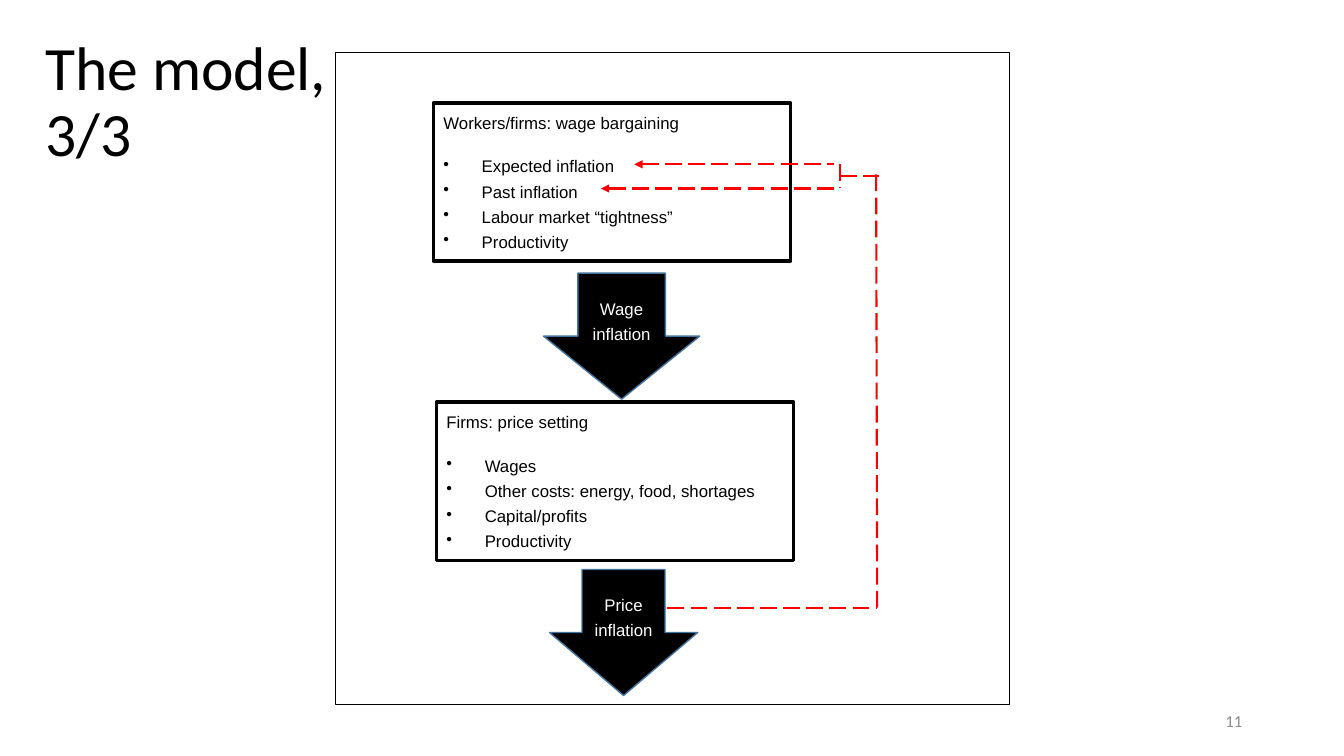
from dataclasses import dataclass
from typing import Optional

from lxml.etree import SubElement
from pptx import Presentation
from pptx.dml.color import RGBColor
from pptx.enum.dml import MSO_LINE
from pptx.enum.shapes import MSO_CONNECTOR, MSO_SHAPE
from pptx.enum.text import MSO_ANCHOR, PP_ALIGN
from pptx.oxml.ns import qn
from pptx.util import Emu, Pt

PX = 9144


@dataclass(frozen=True)
class Theme:
    black: RGBColor = RGBColor(0, 0, 0)
    white: RGBColor = RGBColor(255, 255, 255)
    red: RGBColor = RGBColor(255, 0, 0)
    outline: RGBColor = RGBColor(0x43, 0x73, 0x9E)
    grey: RGBColor = RGBColor(0x8C, 0x8C, 0x8C)
    body_font: str = "Arial"
    title_font: str = "Calibri"
    body_size: int = 12
    title_size: int = 44


@dataclass(frozen=True)
class Box:
    x: int
    y: int
    w: int
    h: int


@dataclass(frozen=True)
class Stage:
    box: Box
    heading: str
    factors: tuple[str, ...]


@dataclass(frozen=True)
class Outcome:
    box: Box
    label: str
    shaft: float


@dataclass(frozen=True)
class Feedback:
    x1: int
    y1: int
    x2: int
    y2: int
    arrow: bool = False


THEME = Theme()
FRAME = Box(333, 52, 668, 647)
STAGES = (
    Stage(Box(433, 399, 354, 157), "Firms: price setting",
          ("Wages", "Other costs: energy, food, shortages", "Capital/profits", "Productivity")),
    Stage(Box(430, 102, 354, 157), "Workers/firms: wage bargaining",
          ("Expected inflation", "Past inflation", "Labour market “tightness”", "Productivity")),
)
OUTCOMES = (
    Outcome(Box(539, 271, 155, 125), "Wage inflation", 0.56),
    Outcome(Box(545, 565, 147, 125), "Price inflation", 0.56),
)
FEEDBACKS = (
    Feedback(662, 603, 869, 603),
    Feedback(869, 173, 870, 603),
    Feedback(833, 175, 872, 175),
    Feedback(596, 187, 831, 187, arrow=True),
    Feedback(833, 163, 833, 186),
    Feedback(629, 163, 827, 163, arrow=True),
)


def px(n: int) -> Emu:
    return Emu(n * PX)


def place(box: Box) -> tuple[Emu, Emu, Emu, Emu]:
    return px(box.x), px(box.y), px(box.w), px(box.h)


def style_text(p, font: str, size: int, color: RGBColor) -> None:
    for r in p.runs:
        r.font.name = font
        r.font.size = Pt(size)
        r.font.color.rgb = color


def add_box(s, kind: MSO_SHAPE, box: Box, line: RGBColor, width: float,
            fill: Optional[RGBColor] = None):
    sp = s.shapes.add_shape(kind, *place(box))
    sp.shadow.inherit = False
    if fill is None:
        sp.fill.background()
    else:
        sp.fill.solid()
        sp.fill.fore_color.rgb = fill
    sp.line.color.rgb = line
    sp.line.width = Pt(width)
    return sp


def add_stage(s, stage: Stage) -> None:
    sp = add_box(s, MSO_SHAPE.RECTANGLE, stage.box, THEME.black, 2.5)
    tf = sp.text_frame
    tf.vertical_anchor = MSO_ANCHOR.TOP
    tf.text = "\n".join((stage.heading, *stage.factors))
    last = len(stage.factors)
    for i, p in enumerate(tf.paragraphs):
        p.alignment = PP_ALIGN.LEFT
        p.line_spacing = 1.25
        p.space_after = Pt(13 if i in (0, last) else 0)
        style_text(p, THEME.body_font, THEME.body_size, THEME.black)
        if i:
            pPr = p._p.get_or_add_pPr()
            pPr.set("marL", str(px(38)))
            pPr.set("indent", str(px(-38)))
            SubElement(pPr, qn("a:buChar")).set("char", "•")


def add_outcome(s, outcome: Outcome) -> None:
    sp = add_box(s, MSO_SHAPE.DOWN_ARROW, outcome.box, THEME.outline, 1, THEME.black)
    sp.adjustments[0] = outcome.shaft
    sp.adjustments[1] = 0.5
    tf = sp.text_frame
    tf.vertical_anchor = MSO_ANCHOR.MIDDLE
    tf.text = outcome.label
    p = tf.paragraphs[0]
    p.alignment = PP_ALIGN.CENTER
    p.line_spacing = 1.25
    p.space_after = Pt(13)
    style_text(p, THEME.body_font, THEME.body_size, THEME.white)


def add_feedback(s, f: Feedback) -> None:
    sp = s.shapes.add_connector(MSO_CONNECTOR.STRAIGHT, px(f.x1), px(f.y1), px(f.x2), px(f.y2))
    sp.line.color.rgb = THEME.red
    sp.line.width = Pt(1.5)
    sp.line.dash_style = MSO_LINE.LONG_DASH
    spPr = sp._element.spPr
    if f.arrow:
        SubElement(spPr.find(qn("a:ln")), qn("a:headEnd")).set("type", "triangle")
    SubElement(spPr, qn("a:effectLst"))


def add_label(s, box: Box, text: str, size: int, color: RGBColor,
              align: PP_ALIGN, spacing: float) -> None:
    tf = s.shapes.add_textbox(*place(box)).text_frame
    tf.word_wrap = True
    tf.vertical_anchor = MSO_ANCHOR.MIDDLE
    tf.text = text
    p = tf.paragraphs[0]
    p.alignment = align
    p.line_spacing = spacing
    style_text(p, THEME.title_font, size, color)


def main() -> None:
    prs = Presentation()
    prs.slide_width, prs.slide_height = px(1333), px(750)
    s = prs.slides.add_slide(prs.slide_layouts[6])
    add_box(s, MSO_SHAPE.RECTANGLE, FRAME, THEME.black, 0.75)
    for stage in STAGES:
        add_stage(s, stage)
    for outcome in OUTCOMES:
        add_outcome(s, outcome)
    for feedback in FEEDBACKS:
        add_feedback(s, feedback)
    add_label(s, Box(35, 25, 348, 155), "The model,\v3/3", THEME.title_size,
              THEME.black, PP_ALIGN.LEFT, 0.9)
    add_label(s, Box(942, 695, 300, 40), "11", THEME.body_size,
              THEME.grey, PP_ALIGN.RIGHT, 1.0)
    prs.save("out.pptx")


if __name__ == "__main__":
    main()
